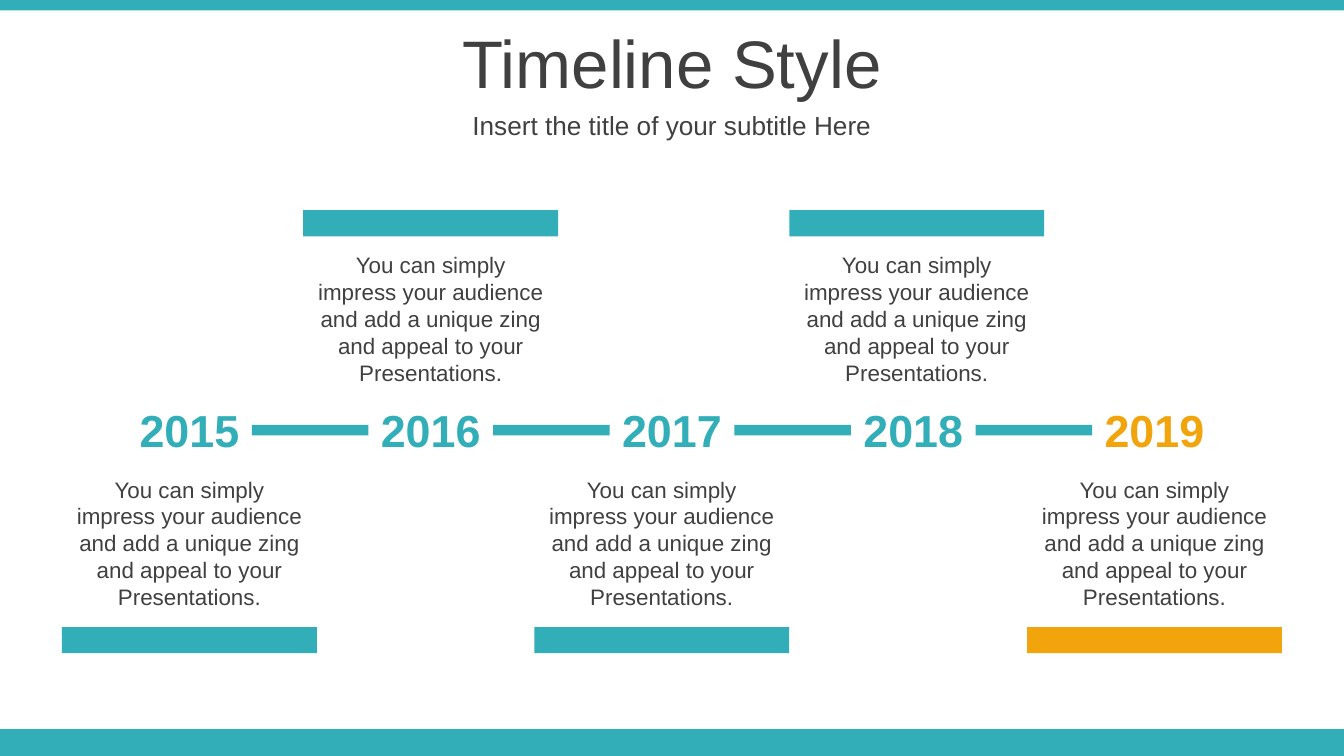
from dataclasses import dataclass

from pptx import Presentation
from pptx.dml.color import RGBColor
from pptx.enum import shapes, text
from pptx.util import Pt

TEAL, ORANGE, GREY = "32AEB8", "F2A40D", "404040"
SLIDE_W, SLIDE_H = 720, 405
YEAR_PITCH, YEAR_W = 129.25, 72.8
LINK_W = 62.4
CARD_W, CARD_TEXT_H, CARD_BAR_H = 136.6, 79.9, 14.1
MESSAGE = ("You can simply impress your audience and add a unique zing "
           "and appeal to your Presentations.")


@dataclass
class Milestone:
    year: str
    above: bool = False
    color: str = TEAL
    card_shift: float = 0  # card offset from the centre of its year


MILESTONES = [
    Milestone("2015"),
    Milestone("2016", above=True),
    Milestone("2017", card_shift=-5.5),
    Milestone("2018", above=True, card_shift=1.9),
    Milestone("2019", color=ORANGE),
]


def rgb(value: str) -> RGBColor:
    return RGBColor.from_string(value)


def draw_bar(slide, left: float, top: float, width: float, height: float,
             color: str = TEAL) -> None:
    bar = slide.shapes.add_shape(shapes.MSO_SHAPE.RECTANGLE, Pt(left), Pt(top),
                                 Pt(width), Pt(height))
    bar.shadow.inherit = False
    bar.fill.solid()
    bar.fill.fore_color.rgb = rgb(color)
    bar.line.fill.background()


def write(frame, words: str, size: float, color: str, bold: bool = False) -> None:
    frame.word_wrap = True
    paragraph = frame.paragraphs[0]
    paragraph.text = words
    paragraph.alignment = text.PP_ALIGN.CENTER
    paragraph.space_before = Pt(0)
    font = paragraph.font
    font.name, font.size, font.bold = "Arial", Pt(size), bold
    font.color.rgb = rgb(color)


def draw_text(slide, left: float, top: float, width: float, height: float,
              words: str, size: float, color: str, bold: bool = False) -> None:
    box = slide.shapes.add_textbox(Pt(left), Pt(top), Pt(width), Pt(height))
    write(box.text_frame, words, size, color, bold)


def fill_heading(heading, top: float, height: float, words: str, size: float) -> None:
    heading.left, heading.top = Pt(0), Pt(top)
    heading.width, heading.height = Pt(SLIDE_W), Pt(height)
    heading.text_frame.auto_size = text.MSO_AUTO_SIZE.NONE
    heading.text_frame.vertical_anchor = text.MSO_ANCHOR.MIDDLE
    write(heading.text_frame, words, size, GREY)


def draw_card(slide, milestone: Milestone, center: float) -> None:
    left = center + milestone.card_shift - CARD_W / 2
    text_top, bar_top = (131, 112.5) if milestone.above else (251.3, 335.9)
    draw_text(slide, left, text_top, CARD_W, CARD_TEXT_H, MESSAGE, 12, GREY)
    draw_bar(slide, left, bar_top, CARD_W, CARD_BAR_H, milestone.color)


def main() -> None:
    deck = Presentation()
    deck.slide_width, deck.slide_height = Pt(SLIDE_W), Pt(SLIDE_H)
    slide = deck.slides.add_slide(deck.slide_layouts[0])

    # Frame strips
    draw_bar(slide, 0, 390.6, SLIDE_W, 14.4)
    draw_bar(slide, 0, 0, SLIDE_W, 5.6)

    # Headings
    title, subtitle = slide.placeholders
    fill_heading(title, 10.4, 45.4, "Timeline Style", 36)
    fill_heading(subtitle, 55.7, 22.7, "Insert the title of your subtitle Here", 14)

    # Years, the links between them, and their cards
    first_center = SLIDE_W / 2 - YEAR_PITCH * (len(MILESTONES) - 1) / 2
    for index, milestone in enumerate(MILESTONES):
        center = first_center + index * YEAR_PITCH
        draw_text(slide, center - YEAR_W / 2, 212.4, YEAR_W, 36,
                  milestone.year, 24, milestone.color, bold=True)
        if index:
            draw_bar(slide, center - (YEAR_PITCH + LINK_W) / 2, 227.7, LINK_W, 5.6)
        draw_card(slide, milestone, center)

    deck.save("out.pptx")


if __name__ == "__main__":
    main()
